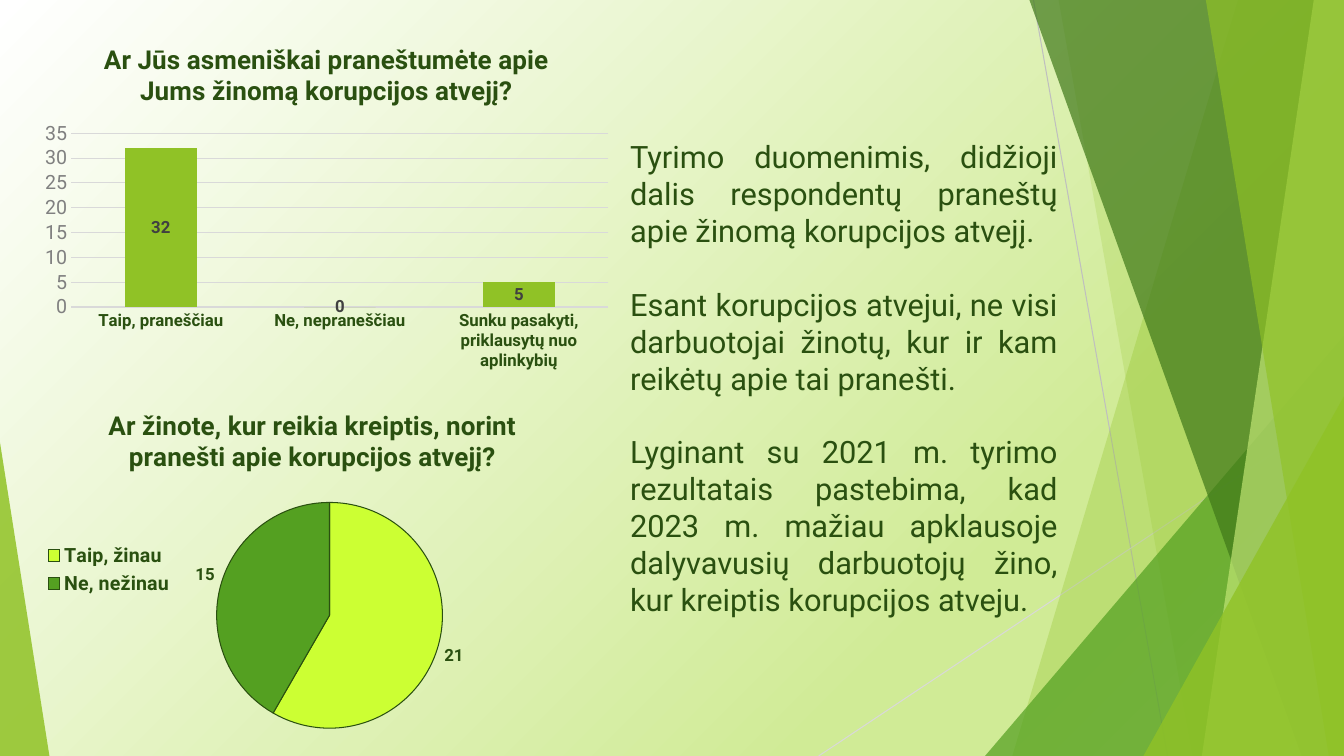
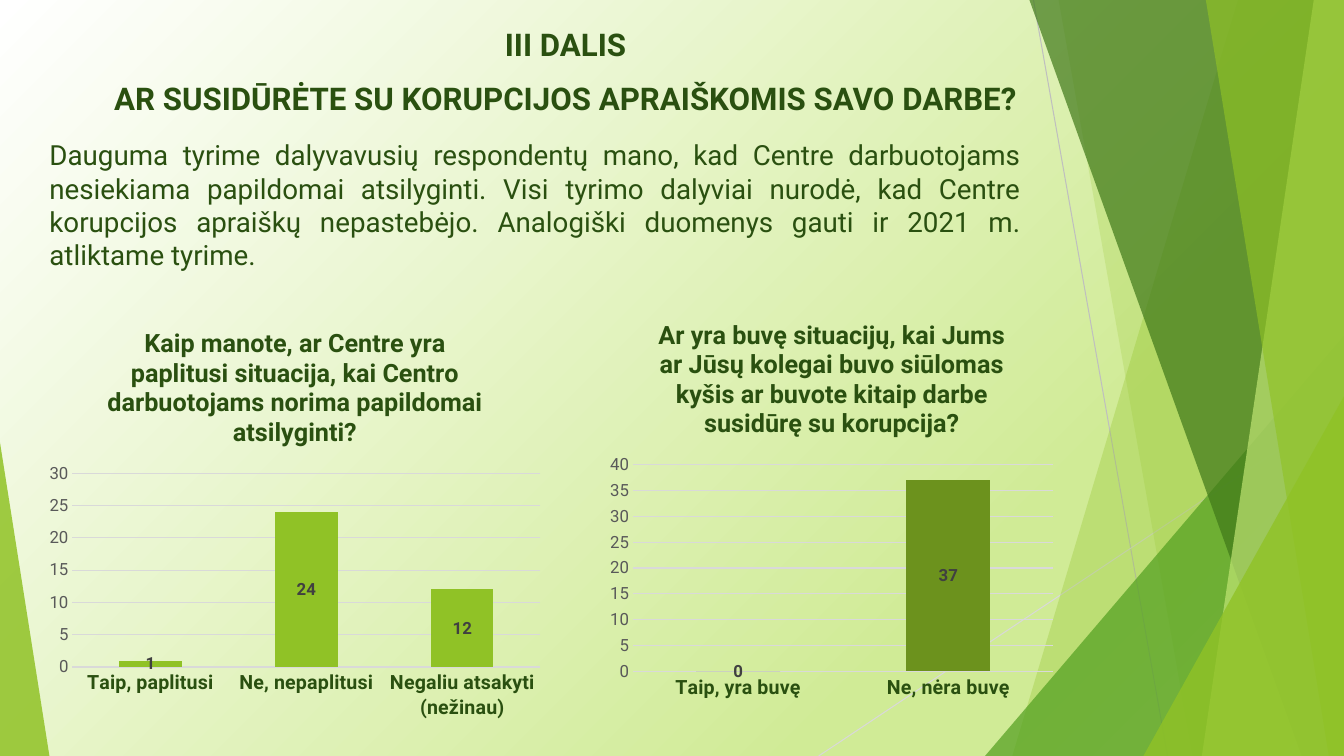
"""Build two slides of survey results on reporting corruption."""
from pptx import Presentation, util as u
from pptx.chart.data import CategoryChartData
from pptx.dml.color import RGBColor
from pptx.enum import chart as ch, shapes as sh, text as tx
from pptx.oxml import parse_xml
from pptx.oxml.ns import nsdecls, qn

INK, LIME, LEAF, GRID = "2A5010", "90C226", "54A021", "D9D9D9"
WIDE, HIGH = 13.33, 7.5
STOPS = [(0, "FFFFFF"), (74, "D0EB96"), (83, "D0EB96"), (100, "DFF1B9")]
LINES = [((10.25, 0, 11.58, HIGH), "BFBFBF"), ((WIDE, 4.03, 8.12, HIGH), GRID)]
BANDS = [
    ("free", (12.28, 10.04), LIME, 30),
    ("free", (10.5, 11.83), LIME, 20),
    ("tri", (9.77, 3.33, 3.56, 4.17, 1), LEAF, 72),
    ("free", (10.21, 12.91), "3F7819", 70),
    ("free", (13.03, 11.92), "C0E474", 70),
    ("free", (11.96, 13.18), LIME, 65),
    ("tri", (11.34, 3.93, 1.99, 3.57, 1), LIME, 80),
    ("tri", (0, 4.39, 0.49, 3.11, 0), LIME, 85),
]


def hue(code):
    return RGBColor.from_string(code)


def put(item, **vals):
    for key, val in vals.items():
        setattr(item, key, val)


def spot(part, **vals):
    tags = "".join(f'<c:{key} val="{val}"/>' for key, val in vals.items())
    return parse_xml(f'<c:layout {nsdecls("c")}><c:manualLayout>{part}'
                     f'<c:xMode val="edge"/><c:yMode val="edge"/>{tags}'
                     '</c:manualLayout></c:layout>')


class Deck:
    """Hold the style and the current slide."""

    def __init__(self):
        self.show = Presentation()
        put(self.show, slide_width=u.Inches(WIDE), slide_height=u.Inches(HIGH))
        self.base = self.show.slide_layouts[5]
        self.slide = None
        self.back()

    def back(self):
        page = self.show.slide_master
        fill = page.background.fill
        fill.gradient()
        fill.gradient_angle = 315
        stops = page.element.find(".//" + qn("a:gsLst"))
        for old in list(stops):
            stops.remove(old)
        for pos, code in STOPS:
            stops.append(parse_xml(f'<a:gs {nsdecls("a")} pos="{pos * 1000}">'
                                   f'<a:srgbClr val="{code}"/></a:gs>'))

    def page(self):
        first = self.slide is None
        self.slide = self.show.slides.add_slide(self.base)
        if first:
            self.decor()

    def decor(self):
        group = self.slide.shapes.add_group_shape()
        for ends, code in LINES:
            line = group.shapes.add_connector(
                sh.MSO_CONNECTOR.STRAIGHT, *map(u.Inches, ends))
            self.rule(line.line, code)
            line.element.spPr.append(parse_xml(f'<a:effectLst {nsdecls("a")}/>'))
        for kind, place, code, alpha in BANDS:
            make = self.free if kind == "free" else self.tri
            band = make(group.shapes, *place)
            band.shadow.inherit = False
            self.paint(band.fill, code)
            band.line.fill.background()
            band.element.find(".//" + qn("a:srgbClr")).append(parse_xml(
                f'<a:alpha {nsdecls("a")} val="{alpha * 1000}"/>'))
        for num, tag in enumerate(group.element.iter(qn("p:cNvPr")), 100):
            tag.set("id", str(num))
        self.base.shapes.element.append(group.element)

    def free(self, pool, top, foot):
        spots = [(top, 0), (WIDE, 0), (WIDE, HIGH), (foot, HIGH)]
        start, *rest = [(u.Inches(x), u.Inches(y)) for x, y in spots]
        form = pool.build_freeform(*start, scale=1.0)
        form.add_line_segments(rest, close=True)
        return form.convert_to_shape()

    def tri(self, pool, x, y, w, h, tip):
        shape = pool.add_shape(sh.MSO_SHAPE.ISOSCELES_TRIANGLE,
                               *map(u.Inches, (x, y, w, h)))
        shape.adjustments[0] = tip
        return shape

    def paint(self, fill, code):
        fill.solid()
        fill.fore_color.rgb = hue(code)

    def rule(self, line, code):
        self.paint(line.fill, code)
        line.width = u.Pt(0.75)

    def ink(self, font, size, code=INK, bold=False):
        put(font, name="Roboto", size=u.Pt(size), bold=bold)
        font.color.rgb = hue(code)

    def say(self, shape, words, size, side, gap, bold=False):
        frame = shape.text_frame
        frame.text = "\n".join(words)
        put(frame, word_wrap=True, auto_size=tx.MSO_AUTO_SIZE.NONE,
            vertical_anchor=tx.MSO_ANCHOR.TOP)
        for par in frame.paragraphs:
            put(par, alignment=side, space_after=u.Pt(gap))
            for run in par.runs:
                self.ink(run.font, size, bold=bold)

    def title(self, box, words, size):
        shape = self.slide.shapes.title
        names = ("left", "top", "width", "height")
        put(shape, **dict(zip(names, map(u.Inches, box))))
        self.say(shape, words, size, tx.PP_ALIGN.JUSTIFY, 26)

    def note(self, box, words, size):
        shape = self.slide.shapes.add_textbox(*map(u.Inches, box))
        self.say(shape, words, size, tx.PP_ALIGN.CENTER, 12, True)

    def chart(self, kind, box, head, size, data):
        feed = CategoryChartData()
        feed.categories = list(data)
        feed.add_series(head, list(data.values()))
        chart = self.slide.shapes.add_chart(
            kind, *map(u.Inches, box), feed).chart
        self.ink(chart.font, 10, "000000")
        put(chart, has_title=True, has_legend=False)
        title = chart.chart_title
        title.include_in_layout = False
        title.text_frame.text = head
        self.ink(title.text_frame.paragraphs[0].runs[0].font, size, bold=True)
        return chart

    def tags(self, plot, place, code):
        plot.has_data_labels = True
        put(plot.data_labels, show_value=True, position=place)
        self.ink(plot.data_labels.font, 12, code, True)

    def bars(self, box, head, data, top, size=18, code=LIME,
             cat=14, val=12, gray="595959", base=True):
        chart = self.chart(ch.XL_CHART_TYPE.COLUMN_STACKED, box, head, size, data)
        plot = chart.plots[0]
        put(plot, gap_width=150, overlap=100, vary_by_categories=False)
        self.paint(plot.series[0].format.fill, code)
        self.tags(plot, ch.XL_LABEL_POSITION.CENTER, "404040")
        low, side = chart.category_axis, chart.value_axis
        for axis in (low, side):
            put(axis, major_tick_mark=ch.XL_TICK_MARK.NONE,
                minor_tick_mark=ch.XL_TICK_MARK.NONE)
            axis.format.line.fill.background()
        if base:
            self.rule(low.format.line, GRID)
        self.ink(low.tick_labels.font, cat, bold=True)
        self.ink(side.tick_labels.font, val, gray)
        put(side, minimum_scale=0, maximum_scale=top, major_unit=5,
            has_major_gridlines=True)
        self.rule(side.major_gridlines.format.line, GRID)

    def pie(self, box, head, data, size, hues):
        chart = self.chart(ch.XL_CHART_TYPE.PIE, box, head, size, data)
        plot = chart.plots[0]
        plot.vary_by_categories = False
        for num, code in enumerate(hues):
            form = plot.series[0].points[num].format
            self.paint(form.fill, code)
            self.rule(form.line, INK)
        self.tags(plot, ch.XL_LABEL_POSITION.OUTSIDE_END, INK)
        chart.has_legend = True
        put(chart.legend, position=ch.XL_LEGEND_POSITION.LEFT,
            include_in_layout=False)
        self.ink(chart.legend.font, 14, bold=True)
        title = chart.element.find(".//" + qn("c:title"))
        for old in title.findall(qn("c:layout")):
            title.remove(old)
        title.find(qn("c:tx")).addnext(spot("", x=0.12, y=0.03))
        area = chart.element.find(".//" + qn("c:plotArea"))
        for old in area.findall(qn("c:layout")):
            area.remove(old)
        area.insert(0, spot('<c:layoutTarget val="inner"/>',
                            x=0.29, y=0.31, w=0.43, h=0.64))


def main():
    deck = Deck()

    deck.page()
    deck.title((6.15, 1.32, 4.44, 5.86), [
        "Tyrimo duomenimis, didžioji dalis respondentų praneštų apie žinomą "
        "korupcijos atvejį.",
        "Esant korupcijos atvejui, ne visi darbuotojai žinotų, kur ir kam "
        "reikėtų apie tai pranešti.",
        "Lyginant su 2021 m. tyrimo rezultatais pastebima, kad 2023 m. mažiau "
        "apklausoje dalyvavusių darbuotojų žino, kur kreiptis korupcijos atveju.",
    ], 22)
    deck.bars((0.33, 0.25, 5.82, 3.5),
              "Ar Jūs asmeniškai praneštumėte apie Jums žinomą korupcijos atvejį?",
              {"Taip, praneščiau": 32, "Ne, nepraneščiau": 0,
               "Sunku pasakyti, priklausytų nuo aplinkybių": 5},
              35, size=18.6, cat=12, val=14, gray="808080", base=False)
    deck.pie((0.33, 3.9, 5.82, 3.5),
             "Ar žinote, kur reikia kreiptis, norint pranešti apie korupcijos "
             "atvejį?",
             {"Taip, žinau": 21, "Ne, nežinau": 15}, 18.6, ("CCFF33", LEAF))

    deck.page()
    deck.title((0.39, 1.32, 9.83, 1.55), [
        "Dauguma tyrime dalyvavusių respondentų mano, kad Centre darbuotojams "
        "nesiekiama papildomai atsilyginti. Visi tyrimo dalyviai nurodė, kad "
        "Centre korupcijos apraiškų nepastebėjo. Analogiški duomenys gauti ir "
        "2021 m. atliktame tyrime.",
    ], 19.8)
    deck.note((0.91, 0.2, 9.4, 1.31), [
        "III DALIS", "AR SUSIDŪRĖTE SU KORUPCIJOS APRAIŠKOMIS SAVO DARBE?"], 22.3)
    deck.bars((0.39, 3.06, 5.07, 4.16),
              "Kaip manote, ar Centre yra paplitusi situacija, kai Centro "
              "darbuotojams norima papildomai atsilyginti?",
              {"Taip, paplitusi": 1, "Ne, nepaplitusi": 24,
               "Negaliu atsakyti (nežinau)": 12}, 30)
    deck.bars((5.96, 2.98, 4.58, 4.04),
              "Ar yra buvę situacijų, kai Jums ar Jūsų kolegai buvo siūlomas "
              "kyšis ar buvote kitaip darbe susidūrę su korupcija?",
              {"Taip, yra buvę": 0, "Ne, nėra buvę": 37}, 40, code="6C921D")

    deck.show.save("out.pptx")


if __name__ == "__main__":
    main()
